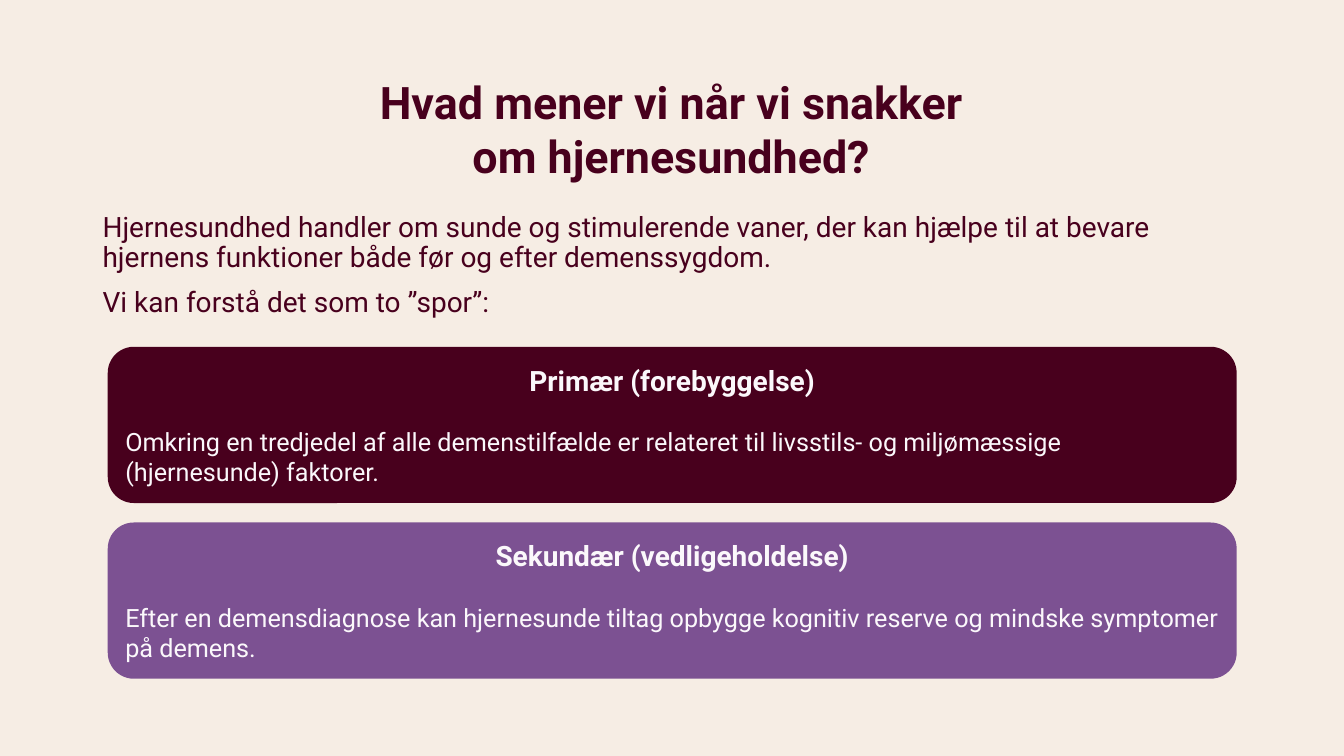
from pptx import Presentation
from pptx.dml.color import RGBColor
from pptx.enum.shapes import MSO_SHAPE as Shape
from pptx.enum.text import MSO_ANCHOR as Anchor, PP_ALIGN as Align
from pptx.util import Pt

COLORS = {"cream": "F6EDE4", "wine": "48001D", "purple": "7C5192", "white": "FBF8FB"}


def add_run(paragraph, text, size, color, bold=False):
    run = paragraph.add_run()
    run.text = text
    run.font.name = "Roboto"
    run.font.size = Pt(size)
    run.font.bold = bold
    run.font.color.rgb = RGBColor.from_string(COLORS[color])


# Slide and background
prs = Presentation()
prs.slide_width, prs.slide_height = Pt(960), Pt(540)
slide = prs.slides.add_slide(prs.slide_layouts[6])
slide.background.fill.solid()
slide.background.fill.fore_color.rgb = RGBColor.from_string(COLORS["cream"])

# Title
title = slide.shapes.add_textbox(Pt(239.8), Pt(49.7), Pt(479.5), Pt(85)).text_frame
title.word_wrap = True
heading = title.paragraphs[0]
heading.alignment = Align.CENTER
add_run(heading, "Hvad mener vi når vi snakker om hjernesundhed?", 32, "wine", bold=True)

# Introduction
intro = slide.shapes.add_textbox(Pt(66.2), Pt(149), Pt(828), Pt(85)).text_frame
intro.word_wrap = True
definition, lead_in = intro.paragraphs[0], intro.add_paragraph()
lead_in.space_before = Pt(10)
for paragraph, text in [
    (definition, "Hjernesundhed handler om sunde og stimulerende vaner, der kan hjælpe "
                 "til at bevare hjernens funktioner både før og efter demenssygdom."),
    (lead_in, "Vi kan forstå det som to ”spor”:"),
]:
    paragraph.line_spacing = 0.9
    add_run(paragraph, text, 20, "wine")

# The two tracks
tracks = [
    ("Primær (forebyggelse)", "wine",
     "Omkring en tredjedel af alle demenstilfælde er relateret til livsstils- "
     "og miljømæssige (hjernesunde) faktorer."),
    ("Sekundær (vedligeholdelse)", "purple",
     "Efter en demensdiagnose kan hjernesunde tiltag opbygge kognitiv reserve "
     "og mindske symptomer på demens."),
]
for i, (name, color, explanation) in enumerate(tracks):
    track = slide.shapes.add_shape(Shape.FLOWCHART_ALTERNATE_PROCESS,
                                   Pt(77), Pt(247.7 + i * 125.5), Pt(806.4), Pt(111.6))
    track.shadow.inherit = False
    track.fill.solid()
    track.fill.fore_color.rgb = RGBColor.from_string(COLORS[color])
    track.line.fill.background()
    frame = track.text_frame
    frame.word_wrap = True
    frame.vertical_anchor = Anchor.MIDDLE
    track_name, track_text = frame.paragraphs[0], frame.add_paragraph()
    track_name.alignment = Align.CENTER
    add_run(track_name, name, 20, "white", bold=True)
    track_text.alignment = Align.LEFT
    track_text.space_before = Pt(21)
    add_run(track_text, explanation, 18, "white")

prs.save("out.pptx")
